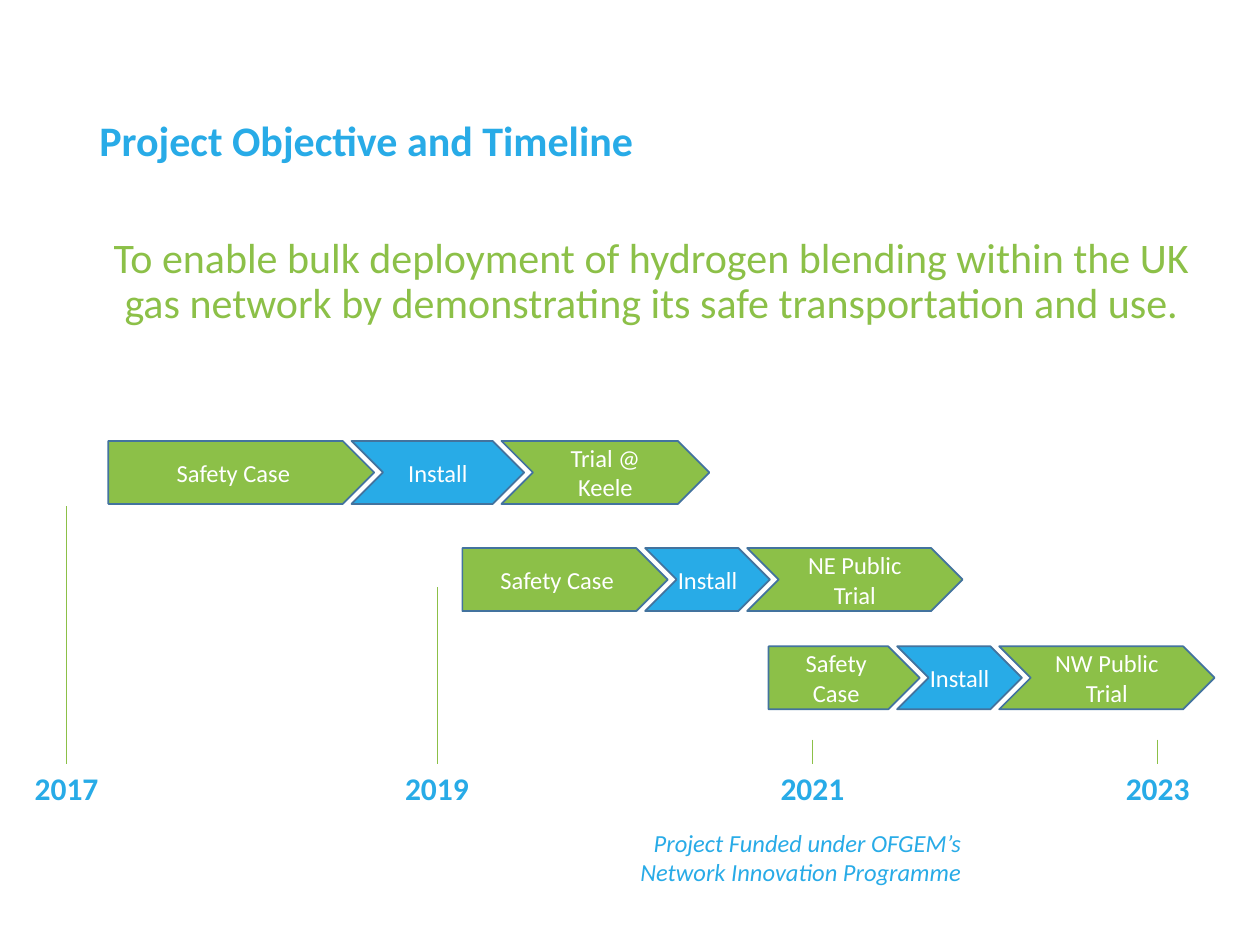
from pptx import Presentation
from pptx.dml.color import RGBColor
from pptx.enum.shapes import MSO_CONNECTOR, MSO_SHAPE
from pptx.enum.text import MSO_ANCHOR, PP_ALIGN
from pptx.oxml.ns import qn
from pptx.util import Inches, Pt
from lxml.etree import SubElement

theme = {
    "font": "Calibri",
    "green": RGBColor.from_string("8CC048"),
    "blue": RGBColor.from_string("28ABE7"),
    "edge": RGBColor.from_string("43739E"),
    "white": RGBColor.from_string("FFFFFF"),
    "large": Pt(24),
    "year": Pt(18),
    "small": Pt(14),
}

deck = Presentation()
deck.slide_width, deck.slide_height = Inches(10), Inches(7.5)
col, row = deck.slide_width / 100, deck.slide_height / 75
page = deck.slides.add_slide(deck.slide_layouts[6])


def place(left, top, width, height):
    return [round(n) for n in (left * col, top * row, width * col, height * row)]


def write(shape, text, size, color, frame={}, para={}, font={}):
    body = shape.text_frame
    line = body.paragraphs[0]
    line.text = text
    face = {"name": theme["font"], "size": theme[size], **font}
    run = line.runs[0].font
    for item, values in (
        (body, {"word_wrap": True, **frame}),
        (line, para),
        (run, face),
        (run.color, {"rgb": theme[color]}),
    ):
        for key, value in values.items():
            setattr(item, key, value)


flush = dict.fromkeys(("margin_left", "margin_right", "margin_top", "margin_bottom"), 0)
middle = {"vertical_anchor": MSO_ANCHOR.MIDDLE}
center = {"alignment": PP_ALIGN.CENTER}
tight = {"line_spacing": 0.9}
bold = {"bold": True}

goal = "To enable bulk deployment of hydrogen blending within the UK gas network by demonstrating its safe transportation and use."
fund = "Project Funded under OFGEM’s Network Innovation Programme"
for spot, *look in (
    ((6.9, 18.3, 89.6, 44.6), goal, "large", "green", {}, {**center, **tight}),
    ((6.9, 6.9, 73.6, 8.9), "Project Objective and Timeline", "large", "blue", middle, tight, bold),
    ((47.7, 65.7, 28.6, 5.4), fund, "small", "blue", flush, {"alignment": PP_ALIGN.RIGHT}, {"italic": True}),
):
    write(page.shapes.add_textbox(*place(*spot)), *look)

marks = (("2017", 5.3, 40.2), ("2019", 34.7, 46.6), ("2021", 64.5, 58.7), ("2023", 91.9, 58.7))
edge, base = 1.1, 60.6
years = page.shapes.add_textbox(*place(edge, 60.9, 95.4, 4))
props = years.text_frame.paragraphs[0]._p.get_or_add_pPr()
tabs = SubElement(props, qn("a:tabLst"))
for year, mid, top in marks:
    stop = round((mid - edge) * col - years.text_frame.margin_left)
    SubElement(tabs, qn("a:tab"), pos=str(stop), algn="ctr")
    start, end = place(mid, top, mid, base)[:2], place(mid, base, 0, 0)[:2]
    tick = page.shapes.add_connector(MSO_CONNECTOR.STRAIGHT, *start, *end)
    tick.line.color.rgb = theme["green"]
    tick.line.width = Pt(0.5)
    SubElement(tick._element.spPr, qn("a:effectLst"))
write(years, "".join("\t" + year for year, mid, top in marks), "year", "blue", {}, tight, bold)

lap, tall = 1.8, 5
kinds = (
    (MSO_SHAPE.PENTAGON, "green", 1),
    (MSO_SHAPE.CHEVRON, "blue", 0),
    (MSO_SHAPE.CHEVRON, "green", 1),
)
plans = (
    (8.6, 35, (21.1, 13.7, 16.5), "Trial @ Keele"),
    (36.7, 43.5, (16.3, 9.9, 17.1), "NE Public Trial"),
    (61, 51.3, (12, 9.9, 17.1), "NW Public Trial"),
)
for left, top, widths, trial in plans:
    names = ("Safety Case", "Install", trial)
    for (kind, color, pad), width, name in zip(kinds, widths, names):
        step = page.shapes.add_shape(kind, *place(left, top, width, tall))
        step.shadow.inherit = False
        step.fill.solid()
        step.fill.fore_color.rgb = theme[color]
        step.line.color.rgb = theme["edge"]
        step.line.width = Pt(1)
        sides = dict.fromkeys(("margin_left", "margin_right"), round(pad * col))
        write(step, name, "small", "white", {**middle, **sides}, center)
        left += width - lap

deck.save("out.pptx")
